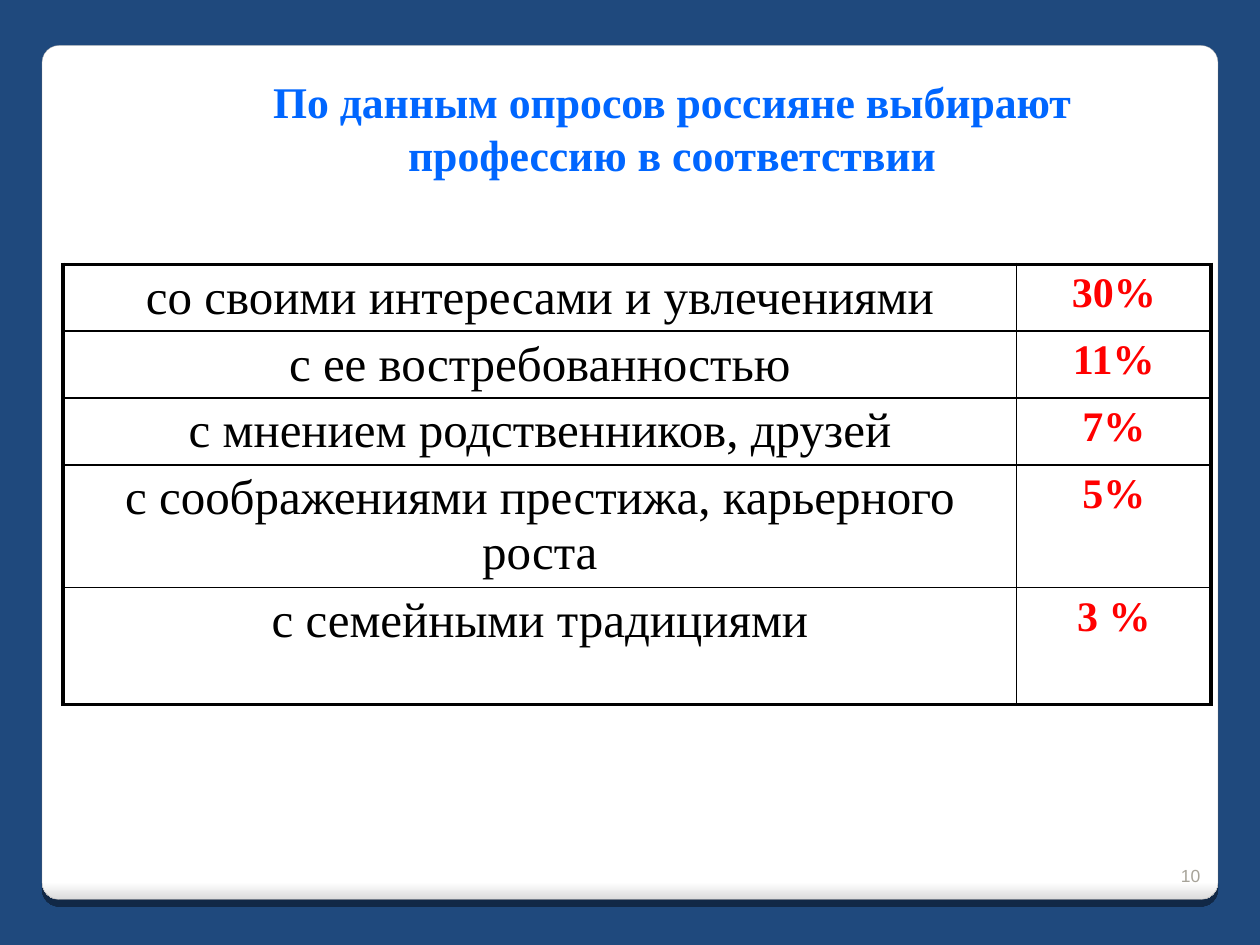
"""Build a slide with a table of reasons for choosing a profession."""
import dataclasses

import lxml.etree
import pptx
import pptx.dml.color
import pptx.enum.shapes
import pptx.enum.text
import pptx.oxml
import pptx.oxml.ns
import pptx.util

Pt = pptx.util.Pt
ALIGN = pptx.enum.text.PP_ALIGN
ANCHOR = pptx.enum.text.MSO_ANCHOR
SERIF = "Times New Roman"
COLORS = {
    "background": "1F497D",
    "panel": "FFFFFF",
    "panel_edge": "DADADA",
    "outline": "A4A3A3",
    "title": "0066FF",
    "text": "000000",
    "share": "FF0000",
    "number": "A7A399",
}


@dataclasses.dataclass(frozen=True)
class Style:
    """Look of a run of text."""

    size: float
    color: str
    bold: bool = False
    font: str = SERIF
    align: ALIGN = ALIGN.CENTER


@dataclasses.dataclass(frozen=True)
class Reason:
    """One row of the table."""

    label: str
    share: str
    height: float = 37


TITLE = Style(25, "title", True)
LABEL = Style(28, "text")
SHARE = Style(24, "share", True)
NUMBER = Style(10, "number", font="Arial", align=ALIGN.RIGHT)
COLUMN_WIDTHS = (545, 111)
REASONS = (
    Reason("со своими интересами и увлечениями", "30%"),
    Reason("с ее востребованностью", "11%"),
    Reason("с мнением родственников, друзей", "7%"),
    Reason("с соображениями престижа, карьерного роста", "5%", 70),
    Reason("с семейными традициями", "3 %", 67),
)


def rgb(name: str) -> pptx.dml.color.RGBColor:
    """Return a named colour."""
    return pptx.dml.color.RGBColor.from_string(COLORS[name])


def write(tf, text: str, style: Style) -> None:
    """Add a styled run to the first paragraph of a text frame."""
    tf.word_wrap = True
    p = tf.paragraphs[0]
    p.alignment = style.align
    r = p.add_run()
    r.text = text
    r.font.size = Pt(style.size)
    r.font.name = style.font
    r.font.bold = style.bold
    r.font.color.rgb = rgb(style.color)


def add_panel(slide):
    """Add the rounded white panel with its hard shadow."""
    sp = slide.shapes.add_shape(
        pptx.enum.shapes.MSO_SHAPE.ROUNDED_RECTANGLE, Pt(24), Pt(26), Pt(672), Pt(488)
    )
    sp.adjustments[0] = 0.02
    sp.fill.gradient()
    sp.fill.gradient_angle = 270
    for stop, position, name in zip(
        sp.fill.gradient_stops, (0.98, 1), ("panel", "panel_edge")
    ):
        stop.position = position
        stop.color.rgb = rgb(name)
    sp.line.color.rgb = rgb("outline")
    sp.line.width = Pt(0.16)
    sp.shadow.inherit = False
    effects = sp.element.spPr.find(pptx.oxml.ns.qn("a:effectLst"))
    effects.append(pptx.oxml.parse_xml(
        f'<a:outerShdw {pptx.oxml.ns.nsdecls("a")} blurRad="0" dist="{Pt(4)}" '
        'dir="5400000" algn="t" rotWithShape="0"><a:srgbClr val="000000">'
        '<a:alpha val="44000"/></a:srgbClr></a:outerShdw>'
    ))
    return sp


def set_border(cell, side: str, width: float) -> None:
    """Draw one solid side of a cell."""
    qn = pptx.oxml.ns.qn
    properties = cell._tc.get_or_add_tcPr()
    line = lxml.etree.SubElement(properties, qn(f"a:ln{side}"), w=str(Pt(width)))
    fill = lxml.etree.SubElement(line, qn("a:solidFill"))
    lxml.etree.SubElement(fill, qn("a:srgbClr"), val=COLORS["text"])


def add_reasons(slide) -> None:
    """Add the table with a thick frame and thin inner lines."""
    last_row, last_column = len(REASONS) - 1, len(COLUMN_WIDTHS) - 1
    frame = slide.shapes.add_table(
        len(REASONS), len(COLUMN_WIDTHS), Pt(36), Pt(151),
        Pt(sum(COLUMN_WIDTHS)), Pt(sum(reason.height for reason in REASONS)),
    )
    table = frame.table
    table.first_row = table.horz_banding = False
    for column, width in zip(table.columns, COLUMN_WIDTHS):
        column.width = Pt(width)
    for i, reason in enumerate(REASONS):
        table.rows[i].height = Pt(reason.height)
        for j, (text, style) in enumerate(((reason.label, LABEL), (reason.share, SHARE))):
            cell = table.cell(i, j)
            write(cell.text_frame, text, style)
            outer = {"L": j == 0, "R": j == last_column, "T": i == 0, "B": i == last_row}
            for side, is_outer in outer.items():
                set_border(cell, side, 2.25 if is_outer else 1)
            cell.fill.background()


def main() -> None:
    """Build and save the slide."""
    prs = pptx.Presentation()
    prs.slide_width, prs.slide_height = Pt(720), Pt(540)
    slide = prs.slides.add_slide(prs.slide_layouts[5])
    slide.background.fill.solid()
    slide.background.fill.fore_color.rgb = rgb("background")

    title = slide.shapes.title
    title.left, title.top, title.width, title.height = Pt(96), Pt(16.5), Pt(576), Pt(90)
    title.text_frame.vertical_anchor = ANCHOR.BOTTOM
    write(
        title.text_frame,
        "По данным опросов россияне выбирают профессию в соответствии",
        TITLE,
    )
    title.element.addprevious(add_panel(slide).element)
    add_reasons(slide)

    number = slide.shapes.add_textbox(Pt(657), Pt(481), Pt(36), Pt(29))
    number.text_frame.vertical_anchor = ANCHOR.BOTTOM
    write(number.text_frame, "10", NUMBER)
    prs.save("out.pptx")


if __name__ == "__main__":
    main()
